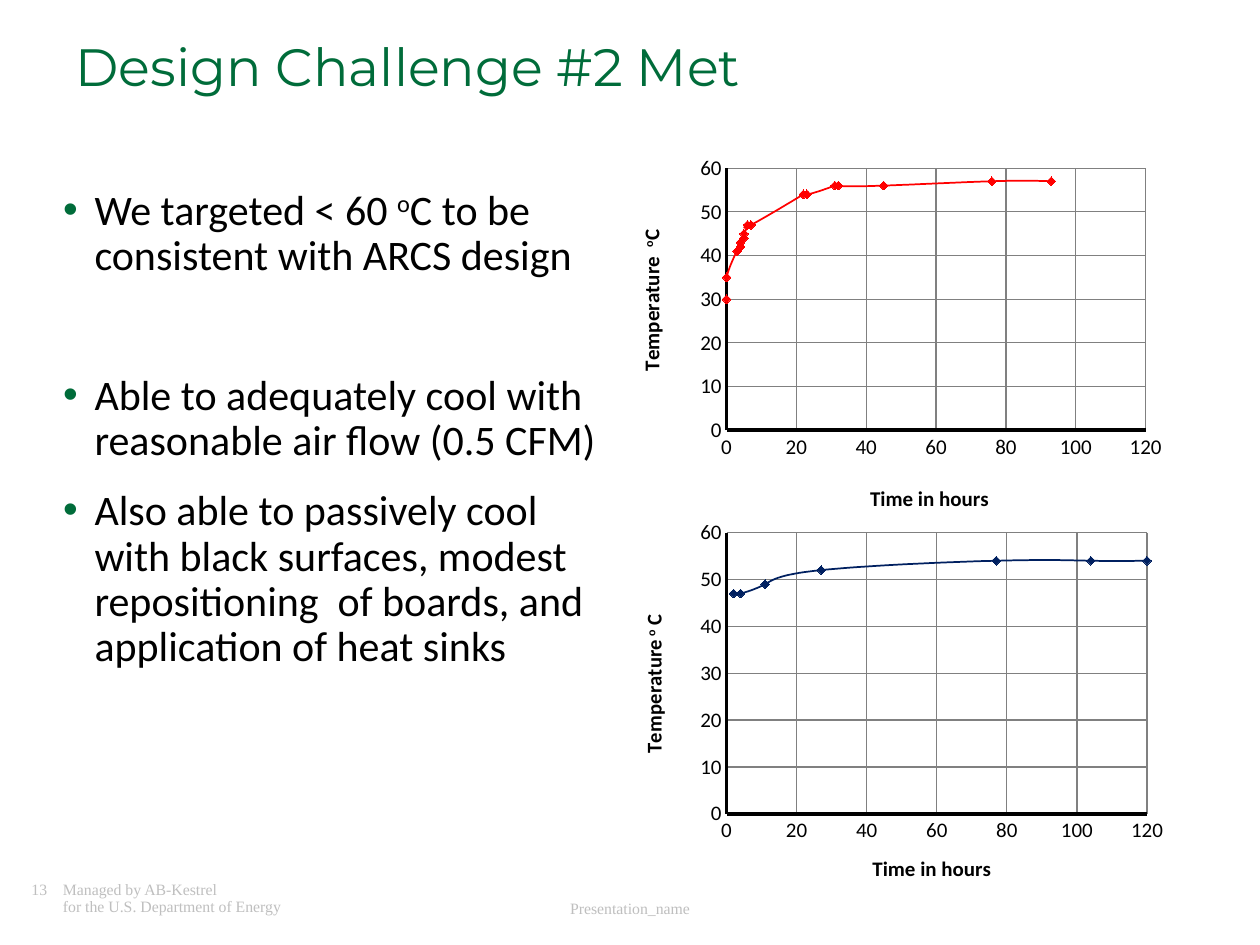
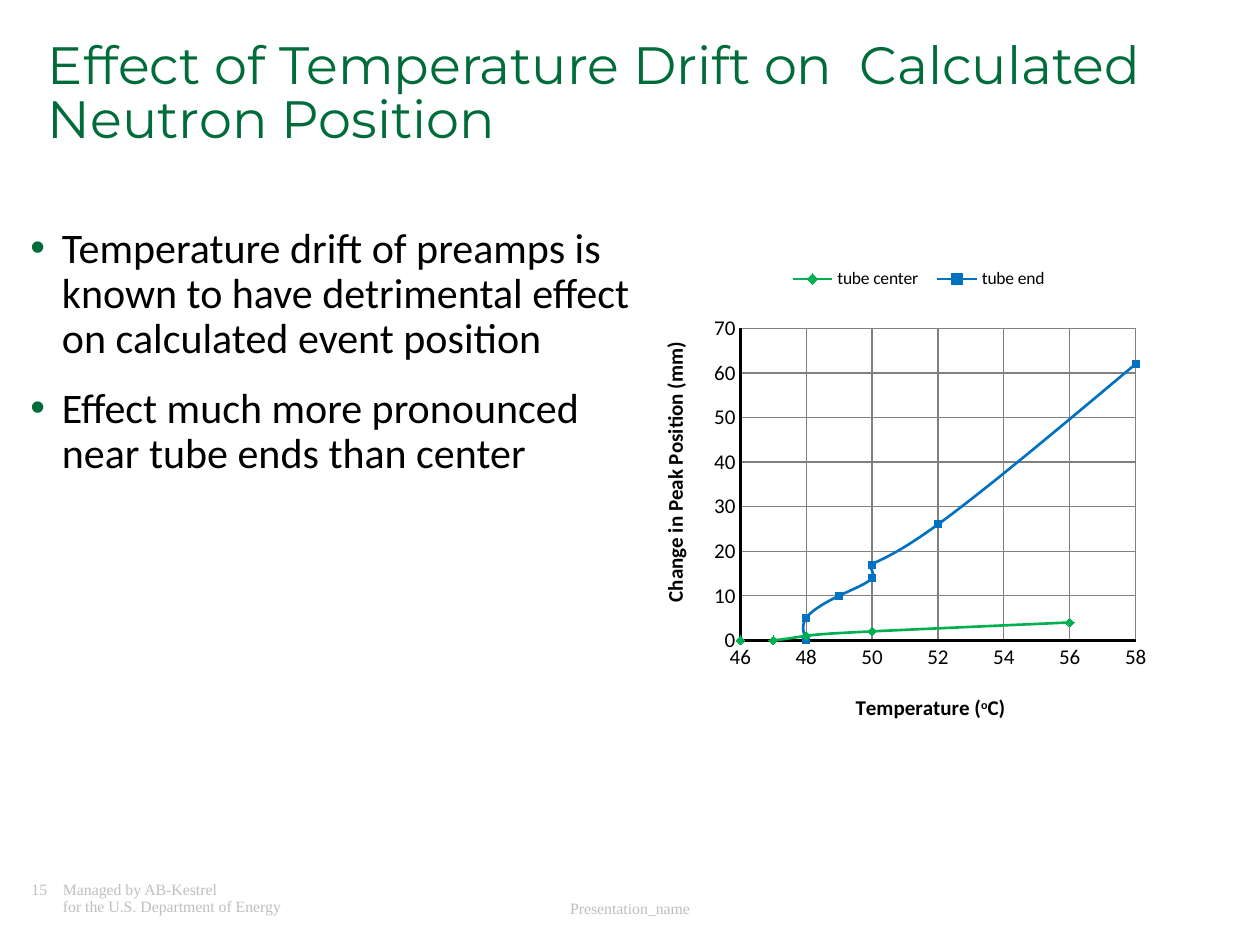
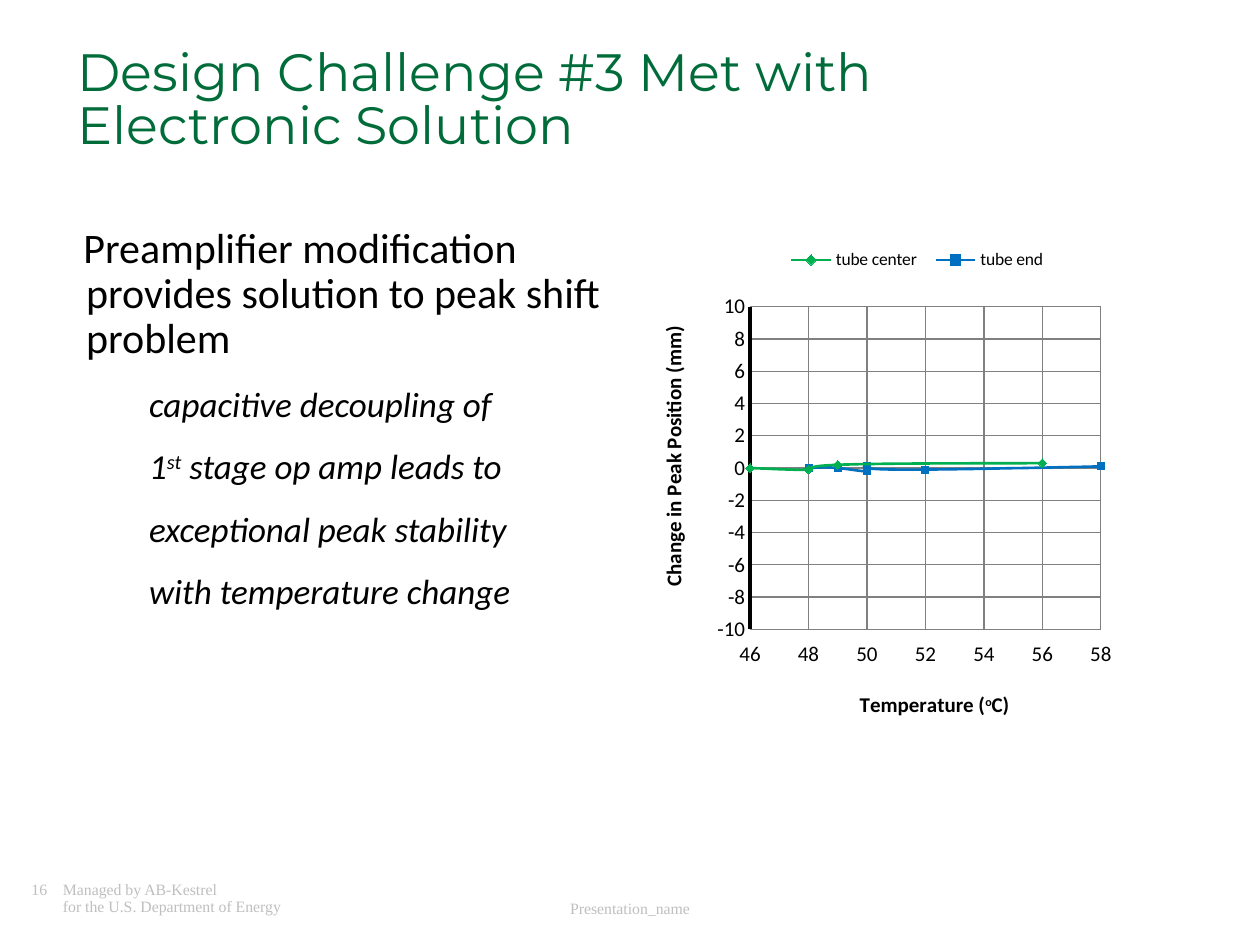
from dataclasses import dataclass
from typing import Any, Optional

import pptx
import pptx.chart.data
import pptx.dml.color
import pptx.enum.chart
import pptx.enum.text
import pptx.oxml
import pptx.oxml.ns
import pptx.util
from lxml import etree

Pt = pptx.util.Pt
RGBColor = pptx.dml.color.RGBColor
qn = pptx.oxml.ns.qn
MarkerStyle = pptx.enum.chart.XL_MARKER_STYLE

GREEN = RGBColor(0x00, 0x6C, 0x3A)
BLACK = RGBColor(0x00, 0x00, 0x00)
FOOTER_GRAY = RGBColor(0xBF, 0xBF, 0xBF)
GRID_GRAY = RGBColor(0x80, 0x80, 0x80)
RED = RGBColor(0xFF, 0x00, 0x00)
NAVY = RGBColor(0x00, 0x20, 0x60)
CENTER_GREEN = RGBColor(0x00, 0xB0, 0x50)
END_BLUE = RGBColor(0x00, 0x70, 0xC0)

TITLE_FONT = "Montserrat"
BODY_FONT = "Calibri"
FOOTER_FONT = "Times New Roman"


@dataclass(frozen=True)
class Box:
    left: float
    top: float
    width: float
    height: float

    def lengths(self) -> tuple:
        return Pt(self.left), Pt(self.top), Pt(self.width), Pt(self.height)


@dataclass(frozen=True)
class BodyLine:
    text: str
    space_before: float = 14
    bulleted: bool = True
    margin: float = 18
    indent: float = -18
    size: float = 24
    italic: bool = False


@dataclass(frozen=True)
class Curve:
    name: str
    points: list[tuple[float, Optional[float]]]
    color: RGBColor
    width: float = 1.5
    marker: MarkerStyle = MarkerStyle.DIAMOND
    marker_size: int = 5


@dataclass(frozen=True)
class AxisStyle:
    title: str
    title_at: tuple[float, float]
    minimum: float
    maximum: float
    step: float
    color: RGBColor = BLACK
    width: float = 2
    vertical: bool = False
    labels_low: bool = False


@dataclass(frozen=True)
class ScatterChart:
    box: Box
    plot: tuple[float, float, float, float]
    horizontal: AxisStyle
    vertical: AxisStyle
    curves: list[Curve]
    legend: Optional[tuple[float, float, float, float]] = None


@dataclass(frozen=True)
class SlideContent:
    number: int
    title: str
    title_box: Box
    body_box: Box
    lines: list[BodyLine]
    charts: list[ScatterChart]


def write_with_superscripts(paragraph: Any, text: str) -> None:
    for index, part in enumerate(text.split("^")):
        run = paragraph.add_run()
        run.text = part
        if index % 2:
            run._r.get_or_add_rPr().set("baseline", "30000")


def style_font(font: Any, name: str, size: float, color: RGBColor) -> None:
    font.name = name
    font.size = Pt(size)
    font.color.rgb = color


def set_bullet(paragraph: Any, line: BodyLine) -> None:
    properties = paragraph._p.get_or_add_pPr()
    properties.set("marL", str(Pt(line.margin)))
    properties.set("indent", str(Pt(line.indent)))
    if line.bulleted:
        color = etree.SubElement(properties, qn("a:buClr"))
        etree.SubElement(color, qn("a:srgbClr"), val=str(GREEN))
        etree.SubElement(properties, qn("a:buChar"), char="•")
    else:
        etree.SubElement(properties, qn("a:buNone"))


def place(shape: Any, box: Box) -> Any:
    shape.left, shape.top, shape.width, shape.height = box.lengths()
    frame = shape.text_frame
    frame.word_wrap = True
    frame.auto_size = pptx.enum.text.MSO_AUTO_SIZE.NONE
    frame.vertical_anchor = pptx.enum.text.MSO_ANCHOR.TOP
    return frame


def fill_title(slide: Any, content: SlideContent) -> None:
    paragraph = place(slide.shapes.title, content.title_box).paragraphs[0]
    paragraph.text = content.title
    paragraph.alignment = pptx.enum.text.PP_ALIGN.LEFT
    paragraph.line_spacing = 0.85
    style_font(paragraph.font, TITLE_FONT, 30, GREEN)


def fill_body(slide: Any, content: SlideContent) -> None:
    frame = place(slide.placeholders[1], content.body_box)
    for index, line in enumerate(content.lines):
        paragraph = frame.add_paragraph() if index else frame.paragraphs[0]
        write_with_superscripts(paragraph, line.text)
        set_bullet(paragraph, line)
        paragraph.line_spacing = 0.9
        paragraph.space_before = Pt(line.space_before if index else 0)
        style_font(paragraph.font, BODY_FONT, line.size, BLACK)
        paragraph.font.italic = line.italic


def add_footer(slide: Any, number: int) -> None:
    frame = slide.shapes.add_textbox(*Box(18, 504, 222, 24).lengths()).text_frame
    frame.word_wrap = True
    frame.margin_left = frame.margin_right = frame.margin_top = frame.margin_bottom = 0
    manager = frame.paragraphs[0]
    manager.text = f"{number}\tManaged by AB-Kestrel\v\tfor the U.S. Department of Energy"
    tabs = etree.SubElement(manager._p.get_or_add_pPr(), qn("a:tabLst"))
    etree.SubElement(tabs, qn("a:tab"), pos=str(Pt(18)), algn="l")
    manager.line_spacing = 0.9

    frame = slide.shapes.add_textbox(*Box(246, 510, 228, 14.4).lengths()).text_frame
    frame.word_wrap = True
    name = frame.paragraphs[0]
    name.text = "Presentation_name"
    name.alignment = pptx.enum.text.PP_ALIGN.CENTER
    for paragraph in (manager, name):
        style_font(paragraph.font, FOOTER_FONT, 9, FOOTER_GRAY)


def set_layout(parent: Any, index: int, fractions: tuple, inner: bool = False) -> None:
    for layout in parent.findall(qn("c:layout")):
        parent.remove(layout)
    layout = etree.Element(qn("c:layout"))
    manual = etree.SubElement(layout, qn("c:manualLayout"))
    if inner:
        etree.SubElement(manual, qn("c:layoutTarget"), val="inner")
    for mode in ("xMode", "yMode"):
        etree.SubElement(manual, qn(f"c:{mode}"), val="edge")
    for key, value in zip("xywh", fractions):
        etree.SubElement(manual, qn(f"c:{key}"), val=str(value))
    parent.insert(index, layout)


def style_axis(axis: Any, style: AxisStyle) -> None:
    axis.minimum_scale = style.minimum
    axis.maximum_scale = style.maximum
    axis.major_unit = style.step
    axis.major_tick_mark = pptx.enum.chart.XL_TICK_MARK.NONE
    axis.minor_tick_mark = pptx.enum.chart.XL_TICK_MARK.NONE
    axis.has_major_gridlines = True
    axis.major_gridlines.format.line.color.rgb = GRID_GRAY
    axis.major_gridlines.format.line.width = Pt(0.75)
    axis.format.line.color.rgb = style.color
    axis.format.line.width = Pt(style.width)
    labels = axis.tick_labels
    style_font(labels.font, BODY_FONT, 12, BLACK)
    labels.number_format = "General"
    labels.number_format_is_linked = False
    if style.labels_low:
        axis.tick_label_position = pptx.enum.chart.XL_TICK_LABEL_POSITION.LOW

    frame = axis.axis_title.text_frame
    paragraph = frame.paragraphs[0]
    write_with_superscripts(paragraph, style.title)
    style_font(paragraph.font, BODY_FONT, 12, BLACK)
    paragraph.font.bold = True
    if style.vertical:
        frame._txBody.bodyPr.set("rot", "-5400000")
        frame._txBody.bodyPr.set("vert", "horz")
    set_layout(axis.axis_title._element, 1, style.title_at)


def style_series(series: Any, curve: Curve) -> None:
    series.format.line.color.rgb = curve.color
    series.format.line.width = Pt(curve.width)
    series.marker.style = curve.marker
    series.marker.size = curve.marker_size
    series.marker.format.fill.solid()
    series.marker.format.fill.fore_color.rgb = curve.color
    series.marker.format.line.color.rgb = curve.color
    element = series._element
    for smooth in element.findall(qn("c:smooth")):
        smooth.set("val", "1")
    for point in list(element.iter(qn("c:pt"))):
        if point.findtext(qn("c:v")) in ("None", ""):
            point.getparent().remove(point)


def add_scatter(slide: Any, scatter: ScatterChart) -> None:
    data = pptx.chart.data.XyChartData()
    for curve in scatter.curves:
        series = data.add_series(curve.name)
        for x, y in curve.points:
            series.add_data_point(x, y)
    chart = slide.shapes.add_chart(
        pptx.enum.chart.XL_CHART_TYPE.XY_SCATTER_SMOOTH, *scatter.box.lengths(), data
    ).chart
    style_font(chart.font, BODY_FONT, 10, BLACK)
    chart.has_title = False
    chart.plots[0].vary_by_categories = False
    style_axis(chart.category_axis, scatter.horizontal)
    style_axis(chart.value_axis, scatter.vertical)
    set_layout(chart._chartSpace.chart.plotArea, 0, scatter.plot, inner=True)
    for series, curve in zip(chart.plots[0].series, scatter.curves):
        style_series(series, curve)

    chart.has_legend = scatter.legend is not None
    if scatter.legend:
        chart.legend.position = pptx.enum.chart.XL_LEGEND_POSITION.RIGHT
        chart.legend.include_in_layout = False
        style_font(chart.legend.font, BODY_FONT, 10, BLACK)
        set_layout(chart.legend._element, 1, scatter.legend)


def hours_axis(title_at: tuple[float, float]) -> AxisStyle:
    return AxisStyle("Time in hours", title_at, 0, 120, 20)


def temperature_axis(title: str, title_at: tuple[float, float]) -> AxisStyle:
    return AxisStyle(title, title_at, 0, 60, 10, vertical=True)


def tube_curves(center: list, end: list) -> list[Curve]:
    center_gaps = [(x, None) for x, _ in center]
    end_gaps = [(x, None) for x, _ in end]
    return [
        Curve("tube center", center + end_gaps, CENTER_GREEN),
        Curve("tube end", center_gaps + end, END_BLUE,
              marker=MarkerStyle.SQUARE, marker_size=4),
    ]


def sub_line(text: str) -> BodyLine:
    return BodyLine(text, bulleted=False, margin=54, indent=0, size=20, italic=True)


AIR_COOLED = ScatterChart(
    Box(352, 76.3, 332.6, 220.3),
    (0.19, 0.09, 0.72, 0.68),
    hours_axis((0.43, 0.9)),
    temperature_axis("Temperature  ^o^C", (0.03, 0.24)),
    [Curve("Series 1", [
        (0, 30), (0, 35), (3, 41), (4, 42), (4, 43), (5, 44), (5, 45), (6, 47),
        (6, 47), (7, 47), (22, 54), (23, 54), (31, 56), (32, 56), (45, 56),
        (76, 57), (93, 57),
    ], RED, 1)],
)
PASSIVE_COOLED = ScatterChart(
    Box(353.5, 289.4, 324.7, 218.2),
    (0.19, 0.07, 0.74, 0.75),
    hours_axis((0.44, 0.92)),
    temperature_axis("Temperature ^o^ C", (0.03, 0.28)),
    [Curve("Series 1", [
        (2, 47), (4, 47), (11, 49), (27, 52), (77, 54), (104, 54), (120, 54),
    ], NAVY, 1)],
)
DRIFT = ScatterChart(
    Box(365.8, 133.9, 318.2, 283),
    (0.18, 0.19, 0.71, 0.63),
    AxisStyle("Temperature (^o^C)", (0.38, 0.92), 46, 58, 2),
    AxisStyle("Change in Peak Position (mm)", (0.03, 0.21), 0, 70, 10, vertical=True),
    tube_curves(
        [(46, 0), (47, 0), (48, 1), (48, 1), (50, 2), (56, 4)],
        [(48, 0), (48, 5), (49, 10), (50, 14), (50, 17), (52, 26), (58, 62)],
    ),
    (0.25, 0.06, 0.5, 0.06),
)
STABLE = ScatterChart(
    Box(365, 118.8, 318.2, 297.4),
    (0.2, 0.19, 0.63, 0.62),
    AxisStyle("Temperature (^o^C)", (0.39, 0.92), 46, 58, 2, GRID_GRAY, 1, labels_low=True),
    AxisStyle("Change in Peak Position (mm)", (0.03, 0.22), -10, 10, 2, vertical=True),
    tube_curves(
        [(46, 0), (46, 0), (48, -0.1), (48, -0.1), (49, 0.2), (56, 0.3)],
        [(48, 0), (49, 0), (50, -0.2), (50, 0.1), (50, 0), (52, -0.1), (58, 0.1)],
    ),
    (0.25, 0.07, 0.5, 0.06),
)

SLIDES = [
    SlideContent(
        13, "Design Challenge #2 Met",
        Box(36, 21.6, 648, 54), Box(28.8, 104.4, 331.2, 338.4),
        [
            BodyLine("We targeted < 60 ^o^C to be consistent with ARCS design"),
            BodyLine("Able to adequately cool with reasonable air flow (0.5 CFM)", 54),
            BodyLine("Also able to passively cool with black surfaces, modest "
                     "repositioning  of boards, and application of heat sinks"),
        ],
        [AIR_COOLED, PASSIVE_COOLED],
    ),
    SlideContent(
        15, "Effect of Temperature Drift on  Calculated Neutron Position",
        Box(20.2, 20.2, 648, 72), Box(10.2, 126, 357.8, 178.6),
        [
            BodyLine("Temperature drift of preamps is known to have detrimental "
                     "effect on calculated event position"),
            BodyLine("Effect much more pronounced near tube ends than center"),
        ],
        [DRIFT],
    ),
    SlideContent(
        16, "Design Challenge #3 Met with Electronic Solution",
        Box(37, 24, 600, 67.7), Box(24, 126, 329.8, 265.7),
        [
            BodyLine("Preamplifier modification provides solution to peak shift problem",
                     bulleted=False, indent=-1.5),
            sub_line("capacitive decoupling of"),
            sub_line("1^st^ stage op amp leads to"),
            sub_line("exceptional peak stability"),
            sub_line("with temperature change"),
        ],
        [STABLE],
    ),
]


def main() -> None:
    presentation = pptx.Presentation()
    presentation.slide_width = Pt(720)
    presentation.slide_height = Pt(540)
    for content in SLIDES:
        slide = presentation.slides.add_slide(presentation.slide_layouts[1])
        add_footer(slide, content.number)
        fill_title(slide, content)
        fill_body(slide, content)
        for scatter in content.charts:
            add_scatter(slide, scatter)
    presentation.save("out.pptx")


if __name__ == "__main__":
    main()
